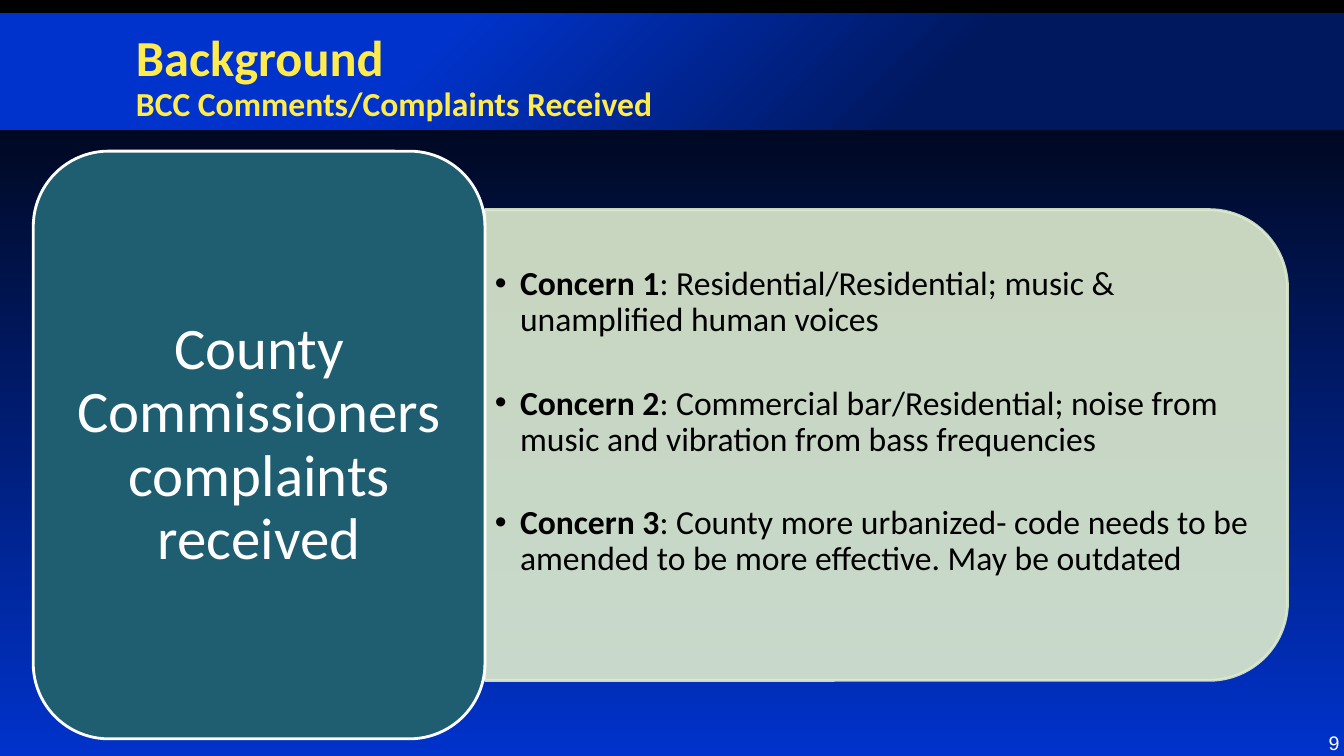
"""Build the Background slide on comments and complaints received by the BCC."""
from lxml import etree
from pptx import Presentation
from pptx.dml.color import RGBColor
from pptx.enum.shapes import MSO_SHAPE
from pptx.enum.text import MSO_ANCHOR, PP_ALIGN
from pptx.oxml.ns import qn
from pptx.util import Inches, Pt

TITLE_LINES = [("Background", 36), ("BCC Comments/Complaints Received", 24)]
SOURCE_LABEL = "County Commissioners complaints received"
CONCERNS = [
    ("Concern 1", ": Residential/Residential; music & unamplified human voices"),
    ("Concern 2", ": Commercial bar/Residential; noise from music and vibration from bass frequencies"),
    ("Concern 3", ": County more urbanized- code needs to be amended to be more effective. May be outdated"),
]
PAGE_NUMBER = "9"

BLACK = RGBColor(0x00, 0x00, 0x00)
WHITE = RGBColor(0xFF, 0xFF, 0xFF)
BLUE = RGBColor(0x00, 0x33, 0xCC)
NAVY = RGBColor(0x00, 0x18, 0x5E)
YELLOW = RGBColor(0xFF, 0xEB, 0x4B)
TEAL = RGBColor(0x1E, 0x5E, 0x70)
PALE_GREEN = RGBColor(0xDE, 0xEC, 0xCE)

RECTANGLE = MSO_SHAPE.RECTANGLE
ROUNDED = MSO_SHAPE.ROUNDED_RECTANGLE
ROUNDED_TOP = MSO_SHAPE.ROUND_2_SAME_RECTANGLE
TOP, MIDDLE = MSO_ANCHOR.TOP, MSO_ANCHOR.MIDDLE
CENTER = PP_ALIGN.CENTER

LABEL_LEFT, LABEL_TOP, LABEL_WIDTH, LABEL_HEIGHT = 0.33, 1.5, 4.48, 5.83
PANEL_LEFT = LABEL_LEFT + LABEL_WIDTH
PANEL_LENGTH, PANEL_DEPTH = 7.96, 4.67
PANEL_MIDDLE = LABEL_TOP + LABEL_HEIGHT / 2


def set_gradient(fill, angle, stops):
    fill.gradient()
    fill.gradient_angle = angle
    for stop, (position, color) in zip(fill.gradient_stops, stops):
        stop.position = position
        stop.color.rgb = color


def add_block(page, kind, left, top, width, height):
    block = page.shapes.add_shape(kind, Inches(left), Inches(top), Inches(width), Inches(height))
    block.shadow.inherit = False
    return block


def paint(block, color, line_color, opacity=100):
    block.fill.solid()
    block.fill.fore_color.rgb = color
    block.line.color.rgb = line_color
    block.line.width = Pt(2)
    if opacity < 100:
        for tone in block._element.spPr.iter(qn("a:srgbClr")):
            etree.SubElement(tone, qn("a:alpha"), val=str(opacity * 1000))


def add_text(page, left, top, width, height, anchor):
    box = page.shapes.add_textbox(Inches(left), Inches(top), Inches(width), Inches(height))
    frame = box.text_frame
    frame.word_wrap = True
    frame.vertical_anchor = anchor
    return frame


def next_paragraph(frame, index):
    return frame.add_paragraph() if index else frame.paragraphs[0]


def set_font(paragraph, size, color, name="Calibri"):
    paragraph.font.name = name
    paragraph.font.size = Pt(size)
    paragraph.font.color.rgb = color


def add_bullet(para):
    properties = para._p.get_or_add_pPr()
    properties.set("marL", str(Inches(0.25)))
    properties.set("indent", str(-Inches(0.25)))
    etree.SubElement(properties, qn("a:buFont"), typeface="Arial")
    etree.SubElement(properties, qn("a:buChar"), char="•")


def add_header(page):
    band = add_block(page, RECTANGLE, 0, 0.13, 13.33, 1.16)
    set_gradient(band.fill, 315, [(0.32, BLUE), (0.69, NAVY)])
    band.line.fill.background()
    frame = add_text(page, 1.25, 0.36, 11.72, 0.83, MIDDLE)
    for index, (line, size) in enumerate(TITLE_LINES):
        para = next_paragraph(frame, index)
        para.text = line
        para.line_spacing = 0.9
        set_font(para, size, YELLOW)
        para.font.bold = True


def add_concerns(page):
    panel = add_block(page, ROUNDED_TOP, PANEL_LEFT + (PANEL_LENGTH - PANEL_DEPTH) / 2,
                      PANEL_MIDDLE - PANEL_LENGTH / 2, PANEL_DEPTH, PANEL_LENGTH)
    panel.rotation = 90
    paint(panel, PALE_GREEN, PALE_GREEN, 90)
    frame = add_text(page, PANEL_LEFT, 2.31, 7.74, 4.21, MIDDLE)
    frame.margin_bottom = Inches(0.5)
    for index, (heading, detail) in enumerate(CONCERNS):
        para = next_paragraph(frame, index)
        add_bullet(para)
        para.line_spacing = 0.9
        if index:
            para.space_before = Pt(33.6)
        set_font(para, 24, BLACK)
        span = para.add_run()
        span.text = heading
        span.font.bold = True
        para.add_run().text = detail


def add_label(page):
    label = add_block(page, ROUNDED, LABEL_LEFT, LABEL_TOP, LABEL_WIDTH, LABEL_HEIGHT)
    paint(label, TEAL, WHITE)
    frame = add_text(page, 0.55, 1.72, 4.04, 5.4, MIDDLE)
    frame.margin_left = frame.margin_right = Inches(0.17)
    frame.margin_top = frame.margin_bottom = Inches(0.09)
    para = frame.paragraphs[0]
    para.text = SOURCE_LABEL
    para.alignment = CENTER
    para.line_spacing = 0.9
    set_font(para, 42, WHITE)


def add_page_number(page):
    para = add_text(page, 13.08, 7.2, 0.31, 0.3, TOP).paragraphs[0]
    para.text = PAGE_NUMBER
    set_font(para, 14, WHITE, "Arial")


def main():
    deck = Presentation()
    deck.slide_width, deck.slide_height = Inches(13.33), Inches(7.5)
    page = deck.slides.add_slide(deck.slide_layouts[6])
    set_gradient(page.background.fill, 270, [(0, BLACK), (1, BLUE)])
    add_header(page)
    add_page_number(page)
    add_concerns(page)
    add_label(page)
    deck.save("out.pptx")


if __name__ == "__main__":
    main()
